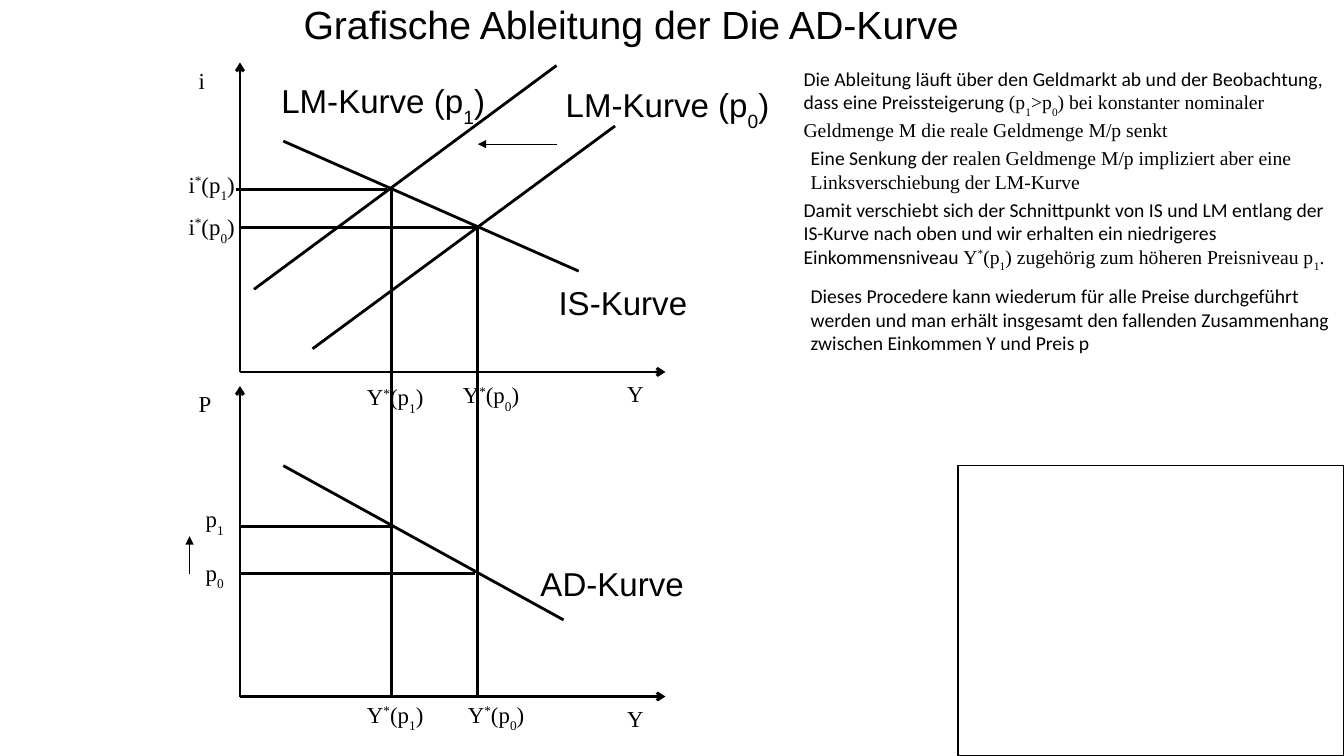
"""Builds the slide that derives the AD curve from the IS-LM diagram."""
from lxml import etree
from pptx import Presentation
from pptx.dml.color import RGBColor
from pptx.enum.shapes import MSO_CONNECTOR, MSO_SHAPE
from pptx.enum.text import MSO_ANCHOR, MSO_AUTO_SIZE
from pptx.oxml.ns import qn
from pptx.util import Inches, Pt

BLACK = RGBColor(0, 0, 0)
STRAIGHT = MSO_CONNECTOR.STRAIGHT
RECTANGLE = MSO_SHAPE.RECTANGLE
TOP = MSO_ANCHOR.TOP
GROW, FIXED = MSO_AUTO_SIZE.SHAPE_TO_FIT_TEXT, MSO_AUTO_SIZE.NONE
SANS, SERIF, BODY = "Arial", "Times New Roman", "Calibri"
BASELINES = {"_": "-33000", "^": "33000"}

prs = Presentation()
prs.slide_width, prs.slide_height = Inches(13.33), Inches(7.5)
s = prs.slides.add_slide(prs.slide_layouts[6])


def add_line(x1, y1, x2, y2, width=0, head=None):
    """Draw a black line, with an arrowhead at its end if one is named."""
    c = s.shapes.add_connector(STRAIGHT, Inches(x1), Inches(y1), Inches(x2), Inches(y2))
    c.line.color.rgb = BLACK
    c.line.width = Pt(width)
    if head:
        etree.SubElement(c.line._get_or_add_ln(), qn("a:tailEnd"), type=head)
    etree.SubElement(c._element.spPr, qn("a:effectLst"))


def add_text(x, y, w, h, size, parts, wrap=False, fit=GROW):
    """Write (font, text) parts; | splits runs, _ lowers and ^ raises a run."""
    tf = s.shapes.add_textbox(Inches(x), Inches(y), Inches(w), Inches(h)).text_frame
    frame = {"margin_left": Inches(0.09), "margin_right": Inches(0.09),
             "margin_top": Inches(0.04), "margin_bottom": Inches(0.04),
             "word_wrap": wrap, "auto_size": fit, "vertical_anchor": TOP}
    for name, value in frame.items():
        setattr(tf, name, value)
    p = tf.paragraphs[0]
    for font, text in parts:
        for piece in text.split("|"):
            r = p.add_run()
            r.text = piece.lstrip("_^")
            r.font.name, r.font.size = font, Pt(size)
            r.font.color.rgb = BLACK
            if piece[0] in BASELINES:
                r._r.get_or_add_rPr().set("baseline", BASELINES[piece[0]])


add_text(2.92, -0.04, 9.21, 0.54, 28, [(SANS, "Grafische Ableitung der Die AD-Kurve")], wrap=True)

AXIS_X = 2.38
for base, axis_top, axis_name in ((3.69, 0.62, "i"), (6.91, 3.83, "P")):
    add_line(AXIS_X, base, AXIS_X, axis_top, head="arrow")
    add_line(AXIS_X, base, 6.6, base, head="arrow")
    add_text(1.88, axis_top, 0.24 if axis_name == "i" else 0.31, 0.35, 16.3, [(SERIF, axis_name)])
    add_text(6.13, base + 0.04, 0.35, 0.35, 16.3, [(SERIF, "Y")])

curves = [
    (3.1, 3.46, 6.1, 1.25),
    (2.52, 2.87, 5.52, 0.65),
    (2.81, 1.4, 5.74, 2.69),
    (2.81, 4.62, 5.59, 6.15),
]
guides = [
    (3.88, 1.87, 3.88, 6.91),
    (4.74, 2.26, 4.74, 6.91),
    (3.84, 1.88, 2.34, 1.88),
    (4.71, 2.26, AXIS_X, 2.26),
    (3.88, 5.22, AXIS_X, 5.22),
    (4.71, 5.69, AXIS_X, 5.69),
]
for ends in curves + guides:
    add_line(*ends)

curve_labels = [
    (2.7, 0.76, 2.23, "LM-Kurve (p|_1|)"),
    (5.52, 0.8, 2.23, "LM-Kurve (p|_0|)"),
    (5.45, 2.76, 1.47, "IS-Kurve"),
    (5.27, 5.55, 1.61, "AD-Kurve"),
]
for x, y, w, label in curve_labels:
    add_text(x, y, w, 0.47, 23.6, [(SANS, label)])

value_labels = [
    (1.78, 1.65, 0.66, "i|^*|(p|_1|)"),
    (1.78, 2.07, 0.66, "i|^*|(p|_0|)"),
    (3.55, 3.76, 0.77, "Y|^*|(p|_1|)"),
    (4.5, 3.74, 0.77, "Y|^*|(p|_0|)"),
    (1.95, 4.97, 0.37, "p|_1"),
    (1.95, 5.5, 0.37, "p|_0"),
    (3.55, 6.91, 0.77, "Y|^*|(p|_1|)"),
    (4.55, 6.91, 0.77, "Y|^*|(p|_0|)"),
]
for x, y, w, label in value_labels:
    add_text(x, y, w, 0.35, 16.3, [(SERIF, label)])

explanations = [
    (7.88, 0.62, 5.45, 0.8, [
        (BODY, "Die Ableitung läuft über den Geldmarkt ab und der Beobachtung, "
               "dass eine Preissteigerung "),
        (SERIF, "(p|_1|>p|_0|) bei konstanter nominaler Geldmenge M "
                "die reale Geldmenge M/p senkt")]),
    (7.95, 1.41, 5.38, 0.58, [
        (BODY, "Eine Senkung der "),
        (SERIF, "realen Geldmenge M/p impliziert aber eine "
                "Linksverschiebung der LM-Kurve")]),
    (7.88, 1.92, 5.45, 0.82, [
        (BODY, "Damit verschiebt sich der Schnittpunkt von IS und LM entlang der "
               "IS-Kurve nach oben und wir erhalten ein niedrigeres Einkommensniveau "),
        (SERIF, "Y|^*|(p|_1|) zugehörig zum höheren Preisniveau p|_1|.")]),
    (7.95, 2.78, 5.38, 0.82, [
        (BODY, "Dieses Procedere kann wiederum für alle Preise durchgeführt werden "
               "und man erhält insgesamt den fallenden Zusammenhang zwischen "
               "Einkommen Y und Preis p")]),
]
for x, y, w, h, parts in explanations:
    add_text(x, y, w, h, 14, parts, wrap=True, fit=FIXED)

add_line(5.52, 1.43, 4.74, 1.43, 0.5, "triangle")
add_line(1.88, 5.69, 1.88, 5.32, 0.5, "triangle")

frame_box = s.shapes.add_shape(RECTANGLE, Inches(9.5), Inches(4.62), Inches(3.83), Inches(2.88))
frame_box.shadow.inherit = False
frame_box.fill.background()
frame_box.line.color.rgb = BLACK
frame_box.line.width = Pt(1)

prs.save("out.pptx")
